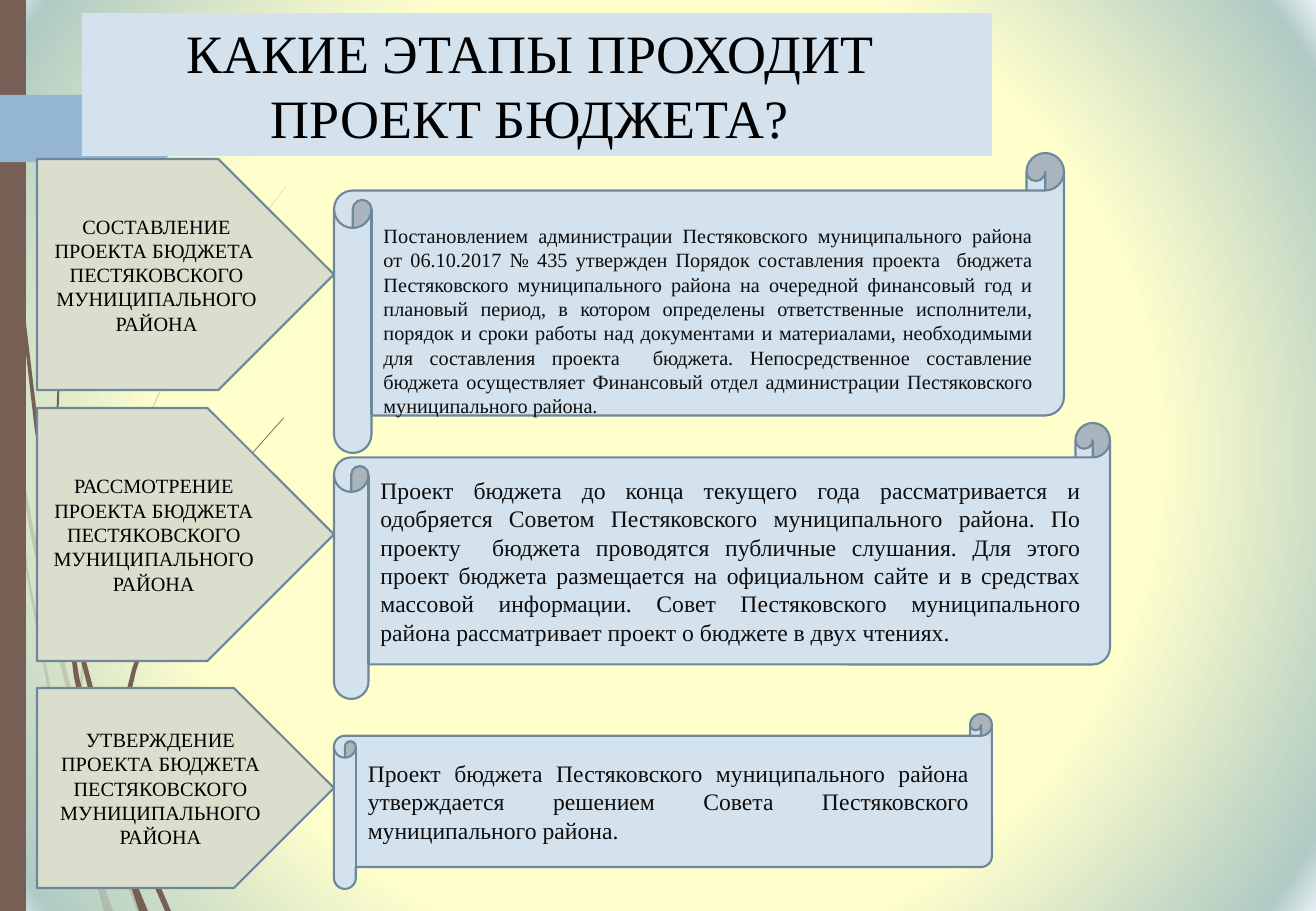
from lxml import etree
from pptx import Presentation
from pptx.dml.color import RGBColor
from pptx.enum.shapes import MSO_SHAPE as SHAPE
from pptx.enum.text import MSO_ANCHOR as ANCHOR, PP_ALIGN as ALIGN
from pptx.oxml.ns import qn
from pptx.util import Pt

PX = 914400 / 121.5
BROWN = RGBColor(0x77, 0x5F, 0x55)
BLUE = RGBColor(0x94, 0xB6, 0xD2)
PALE = RGBColor(0xD4, 0xE2, 0xED)
SAND = RGBColor(0xDB, 0xDD, 0xCD)
EDGE = RGBColor(0x6D, 0x87, 0x9B)
BLACK = RGBColor(0, 0, 0)
INK = RGBColor(0x0D, 0x0D, 0x0D)


def px(n):
    return round(n * PX)


def box(kind, rect, fill, text="", size=12, color=BLACK, align=ALIGN.CENTER, edge=True):
    shape = slide.shapes.add_shape(kind, *[px(n) for n in rect])
    shape.shadow.inherit = False
    shape.fill.solid()
    shape.fill.fore_color.rgb = fill
    if edge:
        shape.line.color.rgb = EDGE
        shape.line.width = Pt(1.25)
    else:
        shape.line.fill.background()
    if text:
        frame = shape.text_frame
        frame.word_wrap = True
        frame.vertical_anchor = ANCHOR.MIDDLE
        frame.text = text
        para = frame.paragraphs[0]
        para.alignment = align
        font = para.runs[0].font
        font.name, font.size, font.color.rgb = "Times New Roman", Pt(size), color
    return shape


deck = Presentation()
deck.slide_width, deck.slide_height = px(1316), px(911)
slide = deck.slides.add_slide(deck.slide_layouts[6])

# Background: round gradient
slide.background.fill.gradient()
grad = slide.element.find(".//" + qn("a:gradFill"))
for child in list(grad):
    grad.remove(child)
stops = etree.SubElement(grad, qn("a:gsLst"))
for pos, tone in [(0, "FFFFCC"), (62, "FFFFCC"), (95, "B0CAC4"), (100, "E9F0F7")]:
    stop = etree.SubElement(stops, qn("a:gs"), pos=str(pos * 1000))
    etree.SubElement(stop, qn("a:srgbClr"), val=tone)
way = etree.SubElement(grad, qn("a:path"), path="circle")
etree.SubElement(way, qn("a:fillToRect"), l="50000", t="50000", r="50000", b="50000")

# Grass blades: faint ones, then dark ones
FAINT = [
    [(0, 343), (7, 391), (10, 425), (10, 418), (0, 363)],
    [(52, 634), (77, 728), (77, 712), (57, 632), (33, 527), (13, 419), (16, 457), (33, 546)],
    [(80, 724), (80, 741), (112, 843), (137, 911), (142, 911), (117, 841), (84, 738)],
    [(85, 830), (63, 752), (28, 570), (16, 457), (10, 425), (26, 571), (60, 755), (84, 842), (92, 868)],
    [(77, 728), (79, 785), (85, 830), (96, 864), (83, 785), (80, 741)],
    [(80, 710), (87, 634), (101, 561), (121, 491), (146, 424), (176, 359), (209, 298), (245, 241),
     (286, 187), (286, 186), (245, 239), (208, 296), (174, 358), (145, 423), (118, 490), (98, 560),
     (84, 634), (78, 710), (80, 724)],
    [(85, 830), (92, 868), (104, 911), (113, 911), (96, 864)],
    [(77, 728), (80, 741), (80, 724), (78, 712)],
]
DARK = [
    [(7, 134), (18, 283), (35, 431), (61, 580), (62, 584), (60, 555), (39, 431), (21, 282), (9, 132),
     (5, 58), (4, 0), (2, 0), (4, 58)],
    [(96, 719), (115, 784), (115, 767), (101, 717), (82, 646), (66, 573), (69, 614)],
    [(123, 789), (120, 779), (120, 797), (143, 860), (165, 911), (171, 911), (148, 858)],
    [(119, 840), (107, 798), (79, 676), (69, 614), (62, 580), (74, 677), (101, 801), (120, 860), (128, 877)],
    [(66, 573), (63, 550), (58, 424), (63, 298), (68, 234), (77, 171), (75, 171), (67, 234), (61, 298),
     (56, 424), (60, 546), (64, 573)],
    [(62, 580), (69, 614), (66, 573), (60, 546)],
    [(120, 769), (125, 719), (136, 671), (152, 623), (173, 578), (196, 534), (222, 493), (252, 454),
     (284, 418), (283, 418), (252, 453), (221, 492), (194, 532), (170, 576), (149, 621), (132, 669),
     (120, 717), (115, 767), (120, 779)],
    [(115, 784), (120, 840), (128, 877), (139, 911), (148, 911), (131, 870), (120, 797)],
]
for blades, alpha in [(FAINT, 20), (DARK, 100)]:
    for pts in blades:
        path = slide.shapes.build_freeform(*pts[0], scale=PX)
        path.add_line_segments(pts[1:], close=True)
        blade = path.convert_to_shape()
        blade.shadow.inherit = False
        blade.line.fill.background()
        blade.fill.solid()
        blade.fill.fore_color.rgb = BROWN
        if alpha < 100:
            tint = blade.fill._xPr.find(".//" + qn("a:srgbClr"))
            etree.SubElement(tint, qn("a:alpha"), val=str(alpha * 1000))

# Side bar and tab
box(SHAPE.RECTANGLE, (0, 0, 26, 911), BROWN, edge=False)
path = slide.shapes.build_freeform(0, 95, scale=PX)
path.add_line_segments([(160, 95), (163, 96), (196, 126), (196, 130), (163, 161), (160, 162), (0, 162)])
tab = path.convert_to_shape()
tab.shadow.inherit = False
tab.fill.solid()
tab.fill.fore_color.rgb = BLUE
tab.line.fill.background()

# Title
title = box(SHAPE.RECTANGLE, (82, 13, 910, 143), PALE, "КАКИЕ ЭТАПЫ ПРОХОДИТ ПРОЕКТ БЮДЖЕТА?", 32, edge=False)
title.text_frame.margin_right = px(26)

# Stages: arrow on the left, scroll on the right
STAGES = [
    (159, 231, "СОСТАВЛЕНИЕ ПРОЕКТА БЮДЖЕТА  ПЕСТЯКОВСКОГО МУНИЦИПАЛЬНОГО РАЙОНА",
     153, 730, 300, 12,
     "Постановлением администрации Пестяковского муниципального района от 06.10.2017 № 435 утвержден "
     "Порядок составления проекта  бюджета Пестяковского муниципального района на очередной финансовый "
     "год и плановый период, в котором определены ответственные исполнители, порядок и сроки работы над "
     "документами и материалами, необходимыми для составления проекта  бюджета. Непосредственное "
     "составление бюджета осуществляет Финансовый отдел администрации Пестяковского муниципального района."),
    (408, 253, "РАССМОТРЕНИЕ ПРОЕКТА БЮДЖЕТА ПЕСТЯКОВСКОГО МУНИЦИПАЛЬНОГО РАЙОНА",
     423, 776, 276, 14,
     "Проект бюджета до конца текущего года рассматривается и одобряется Советом Пестяковского "
     "муниципального района. По проекту  бюджета проводятся публичные слушания. Для этого проект бюджета "
     "размещается на официальном сайте и в средствах массовой информации. Совет Пестяковского "
     "муниципального района рассматривает проект о бюджете в двух чтениях."),
    (688, 200, "УТВЕРЖДЕНИЕ ПРОЕКТА БЮДЖЕТА ПЕСТЯКОВСКОГО МУНИЦИПАЛЬНОГО РАЙОНА",
     714, 658, 175, 14,
     "Проект бюджета Пестяковского муниципального района утверждается решением Совета Пестяковского "
     "муниципального района."),
]
for top, tall, name, y, wide, high, size, text in STAGES:
    box(SHAPE.PENTAGON, (37, top, 297, tall), SAND, name)
    roll = box(SHAPE.HORIZONTAL_SCROLL, (334, y, wide, high), PALE, text, size, INK, ALIGN.JUSTIFY)
    if size == 12:
        roll.text_frame.margin_top = px(41)

deck.save("out.pptx")
